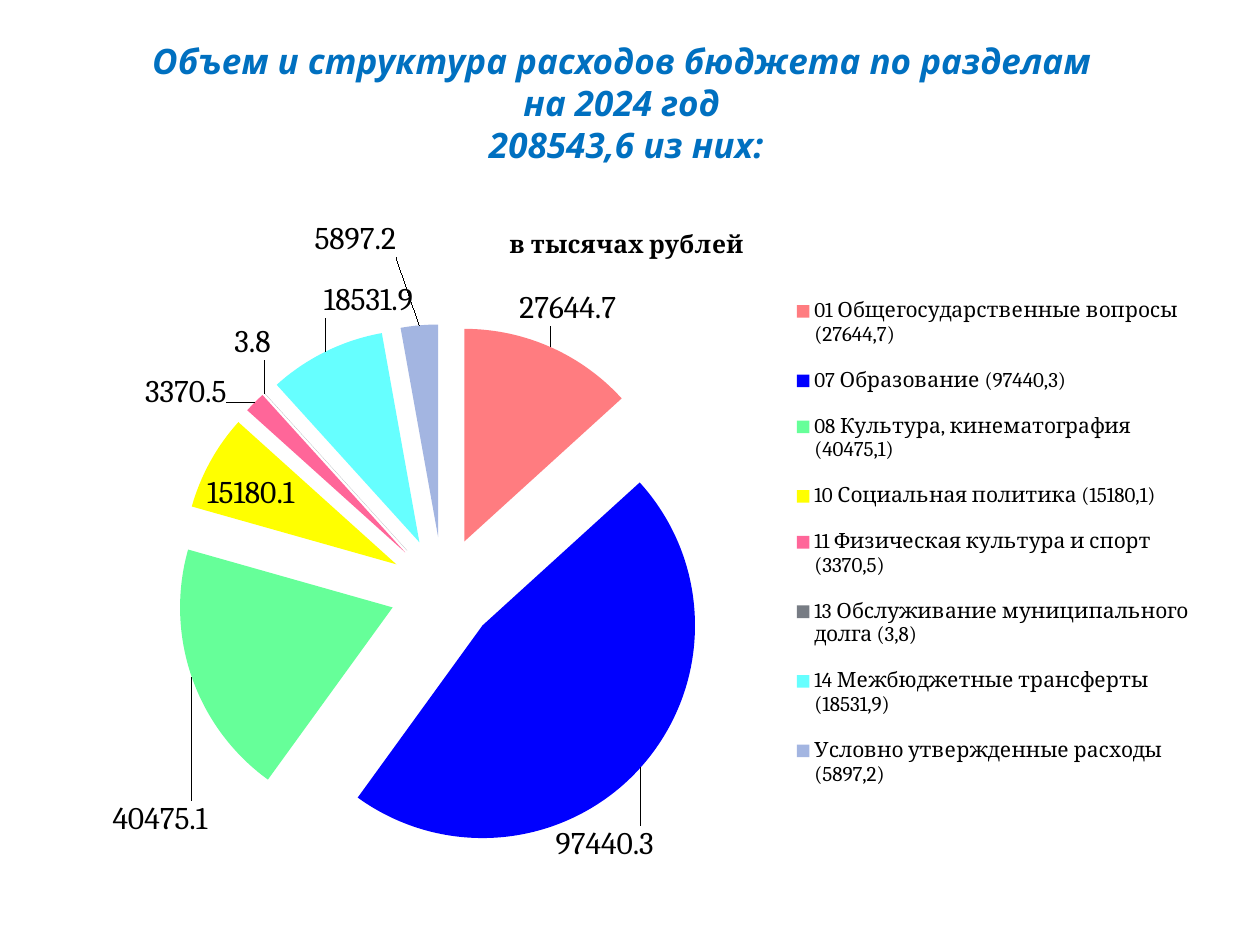
from lxml import etree
from pptx import Presentation, util as u
from pptx.chart.data import CategoryChartData
from pptx.dml.color import RGBColor
from pptx.enum import chart as charts, text
from pptx.oxml import ns

Inches, Pt = u.Inches, u.Pt
TITLE_BLUE = RGBColor(0x00, 0x70, 0xC0)
BLACK = RGBColor(0x00, 0x00, 0x00)
UNIT = "в тысячах рублей"

# category, value, slice colour, label shift as a share of the chart size
SECTIONS = [
    ("01 Общегосударственные вопросы (27644,7)", 27644.7, RGBColor(0xFF, 0x7C, 0x80), (-0.03, -0.02)),
    ("07 Образование (97440,3)", 97440.3, RGBColor(0x00, 0x00, 0xFF), (-0.08, 0.08)),
    ("08 Культура, кинематография (40475,1)", 40475.1, RGBColor(0x66, 0xFF, 0x99), (0.02, 0.18)),
    ("10 Социальная политика (15180,1)", 15180.1, RGBColor(0xFF, 0xFF, 0x00), (0.08, 0.08)),
    ("11 Физическая культура и спорт (3370,5)", 3370.5, RGBColor(0xFF, 0x66, 0x99), (-0.02, 0.02)),
    ("13 Обслуживание муниципального долга (3,8)", 3.8, RGBColor(0x77, 0x7C, 0x84), (0.01, -0.04)),
    ("14 Межбюджетные трансферты (18531,9)", 18531.9, RGBColor(0x66, 0xFF, 0xFF), (0.08, -0.04)),
    ("Условно утвержденные расходы (5897,2)", 5897.2, RGBColor(0xA3, 0xB5, 0xE1), (-0.02, -0.09)),
]


def set_layout(previous, **values):
    """Put a manual chart layout right after the element `previous`."""
    for old in previous.getparent().findall(ns.qn("c:layout")):
        previous.getparent().remove(old)
    layout = etree.Element(ns.qn("c:layout"))
    manual = etree.SubElement(layout, ns.qn("c:manualLayout"))
    for name, value in values.items():
        etree.SubElement(manual, ns.qn(f"c:{name}")).set("val", str(value))
    previous.addnext(layout)


deck = Presentation()
deck.slide_width, deck.slide_height = Inches(10), Inches(7.5)
page = deck.slides.add_slide(deck.slide_layouts[6])

# Heading
box = page.shapes.add_textbox(Inches(0.47), Inches(0.23), Inches(9), Inches(1.17))
box.text_frame.word_wrap = True
box.text_frame.vertical_anchor = text.MSO_ANCHOR.MIDDLE
para = box.text_frame.paragraphs[0]
para.text = "Объем и структура расходов бюджета по разделам \vна 2024 год \v208543,6 из них:"
para.alignment = text.PP_ALIGN.CENTER
for span in para.runs:
    span.font.name = "Noto Sans"
    span.font.size = Pt(20)
    span.font.bold = span.font.italic = True
    span.font.color.rgb = TITLE_BLUE

# Exploded pie
data = CategoryChartData()
data.categories = [section[0] for section in SECTIONS]
data.add_series(UNIT, [section[1] for section in SECTIONS])
chart = page.shapes.add_chart(
    charts.XL_CHART_TYPE.PIE_EXPLODED, Inches(0.5), Inches(1.56), Inches(9), Inches(5.34), data
).chart
chart.font.name = "Cambria"
chart.font.size = Pt(18)
chart.font.color.rgb = BLACK

chart.has_title = True
chart.chart_title.text_frame.text = UNIT
title_font = chart.chart_title.text_frame.paragraphs[0].runs[0].font
title_font.name = "Cambria"
title_font.size = Pt(14)
title_font.bold = True
title_font.color.rgb = BLACK
set_layout(chart.chart_title._element.find(ns.qn("c:tx")),
           xMode="edge", yMode="edge", x=0.39, y=0.04)

chart.has_legend = True
legend = chart.legend
legend.position = charts.XL_LEGEND_POSITION.RIGHT
legend.include_in_layout = False
legend.font.name = "Cambria"
legend.font.size = Pt(12)
legend.font.color.rgb = BLACK
set_layout(legend._element.find(ns.qn("c:legendPos")),
           xMode="edge", yMode="edge", x=0.64, y=0.12, w=0.36, h=0.79)

plot = chart.plots[0]
plot.vary_by_categories = True
series = plot.series[0]
explosion = series._element.find(ns.qn("c:explosion"))
if explosion is None:
    explosion = etree.Element(ns.qn("c:explosion"))
    series._element.find(ns.qn("c:tx")).addnext(explosion)
explosion.set("val", "25")

labels = series.data_labels
labels.show_value = True
labels.position = charts.XL_LABEL_POSITION.OUTSIDE_END
labels.font.name = "Cambria"
labels.font.size = Pt(18)
labels._element.find(ns.qn("c:showLeaderLines")).set("val", "1")

for index, (_, _, colour, (shift_x, shift_y)) in enumerate(SECTIONS):
    point = series.points[index]
    point.format.fill.solid()
    point.format.fill.fore_color.rgb = colour
    label = point.data_label
    label.font.name = "Cambria"
    label.font.size = Pt(18)
    label.position = charts.XL_LABEL_POSITION.OUTSIDE_END
    set_layout(labels._element.findall(ns.qn("c:dLbl"))[index].find(ns.qn("c:idx")),
               x=shift_x, y=shift_y)
    if series._element.findall(ns.qn("c:dPt"))[index].find(ns.qn("c:explosion")) is None:
        part = etree.Element(ns.qn("c:explosion"), val="25")
        series._element.findall(ns.qn("c:dPt"))[index].find(ns.qn("c:spPr")).addprevious(part)

plot_area = plot._element.getparent()
anchor = etree.Element(ns.qn("c:layout"))
plot_area.insert(0, anchor)
marker = etree.Element("marker")
plot_area.insert(0, marker)
set_layout(marker, layoutTarget="inner", xMode="edge", yMode="edge",
           x=0.1, y=0.19, w=0.47, h=0.79)
plot_area.remove(marker)

deck.save("out.pptx")
